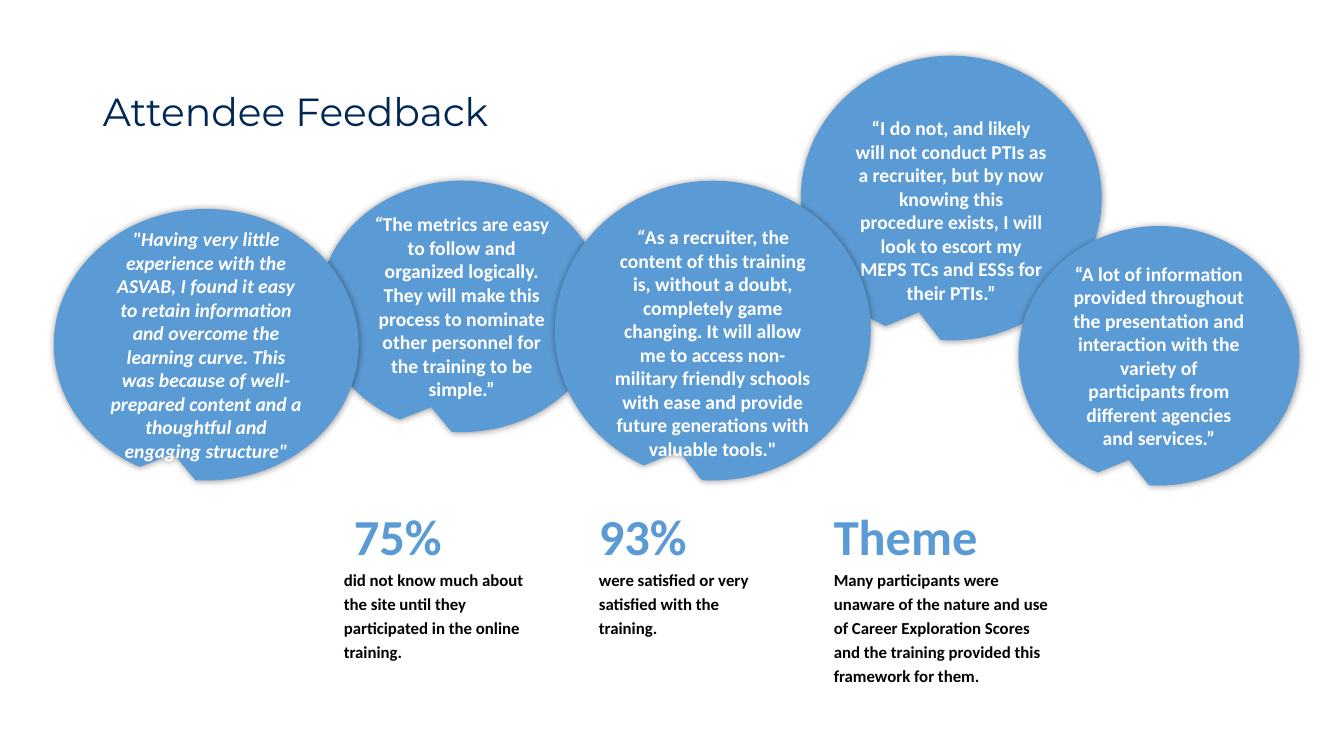
from lxml.etree import SubElement
from pptx import Presentation
from pptx.dml.color import RGBColor
from pptx.enum.shapes import MSO_SHAPE
from pptx.enum.text import MSO_ANCHOR, MSO_AUTO_SIZE, PP_ALIGN
from pptx.oxml.ns import qn
from pptx.util import Pt

PX = 9144  # 100 px to the inch
BLUE, NAVY, WHITE, BLACK = "5B9BD5", "002855", "FFFFFF", "000000"

TITLE = "Attendee Feedback"

# Bubbles from back to front: box, top inset, runs of (text, italic)
BUBBLES = [
    ((317, 180, 282, 248), 5, [
        ("“", True),
        ("The metrics are easy to follow and organized logically. They will make "
         "this process to nominate other personnel for the training to be "
         "simple.”", False)]),
    ((795, 56, 297, 281), 29, [
        ("“I do not, and likely will not conduct PTIs as a recruiter, but by now "
         "knowing this procedure exists, I will look to escort my MEPS TCs and "
         "ESSs for their PTIs.”", False)]),
    ((1011, 225, 277, 256), 5, [
        ("“A lot of information provided throughout the presentation and "
         "interaction with the variety of participants from different agencies "
         "and services.”", False)]),
    ((551, 180, 312, 296), 29, [
        ("“", True),
        ("As a recruiter, the content of this training is, without a doubt, "
         "completely game changing. It will allow me to access non-military "
         "friendly schools with ease and provide future generations with "
         "valuable tools.\"", False)]),
    ((54, 208, 301, 268), 5, [
        ("\"Having very little experience with the ASVAB, I found it easy to "
         "retain information and overcome the learning curve. This was because "
         "of well-prepared content and a thoughtful and engaging structure\"",
         True)]),
]

# Findings: heading, heading left, text, text left, text width, text height
FACTS = [
    ("75%", 351, "did not know much about the site until they participated in "
     "the online training.", 341, 189, 97),
    ("93%", 594, "were satisfied or very satisfied with the training.",
     594, 169, 73),
    ("Theme", 827, "Many participants were unaware of the nature and use of "
     "Career Exploration Scores and the training provided this framework for "
     "them.", 827, 213, 145),
]
HEAD_TOP, HEAD_H, FACT_TOP = 489, 73, 561


def emu(*sizes):
    return [size * PX for size in sizes]


def color(code):
    return RGBColor.from_string(code)


def write(frame, runs, size=14, font="Calibri", fill=WHITE, bold=True,
          align=PP_ALIGN.LEFT, space=1.0, anchor=MSO_ANCHOR.TOP,
          inset=(0, 0, 0, 0), fit=MSO_AUTO_SIZE.NONE):
    frame.word_wrap = True
    frame.auto_size = fit
    frame.vertical_anchor = anchor
    (frame.margin_left, frame.margin_top,
     frame.margin_right, frame.margin_bottom) = emu(*inset)
    para = frame.paragraphs[0]
    para.alignment = align
    para.line_spacing = space
    for text, slant in runs:
        run = para.add_run()
        run.text = text
        run.font.name = font
        run.font.size = Pt(size)
        run.font.bold = bold
        run.font.italic = slant
        run.font.color.rgb = color(fill)


def glow(shape):
    """Give the shape a soft, centred black shadow."""
    shape.shadow.inherit = False
    effects = shape._element.spPr.find(qn("a:effectLst"))
    shade = SubElement(effects, qn("a:outerShdw"), blurRad=str(Pt(5)),
                       dist="0", dir="0", algn="ctr", rotWithShape="0")
    tone = SubElement(shade, qn("a:srgbClr"), val=BLACK)
    SubElement(tone, qn("a:alpha"), val="40000")


def bubble(slide, box, top, runs):
    shape = slide.shapes.add_shape(MSO_SHAPE.OVAL_CALLOUT, *emu(*box))
    shape.adjustments[0] = -0.107
    shape.adjustments[1] = 0.4
    shape.fill.solid()
    shape.fill.fore_color.rgb = color(BLUE)
    shape.line.color.rgb = color(BLUE)
    shape.line.width = Pt(1)
    glow(shape)
    write(shape.text_frame, runs, align=PP_ALIGN.CENTER,
          anchor=MSO_ANCHOR.MIDDLE, inset=(10, top, 10, 5))


def label(slide, box, text, **style):
    area = slide.shapes.add_textbox(*emu(*box))
    write(area.text_frame, [(text, False)], space=1.2,
          fit=MSO_AUTO_SIZE.SHAPE_TO_FIT_TEXT, **style)


def main():
    deck = Presentation()
    deck.slide_width, deck.slide_height = emu(1333, 750)
    slide = deck.slides.add_slide(deck.slide_layouts[5])

    # Title
    title = slide.shapes.title
    title.left, title.top, title.width, title.height = emu(92, 40, 1150, 145)
    write(title.text_frame, [(TITLE, False)], size=28, font="Montserrat",
          fill=NAVY, bold=False, space=0.9, anchor=MSO_ANCHOR.MIDDLE,
          inset=(10, 5, 10, 5))

    # Findings below the bubbles
    for head, head_x, text, text_x, wide, high in FACTS:
        label(slide, (head_x, HEAD_TOP, wide, HEAD_H), head,
              size=36, fill=BLUE)
        label(slide, (text_x, FACT_TOP, wide, high), text,
              size=12, fill=BLACK)

    # Quotes
    for box, top, runs in BUBBLES:
        bubble(slide, box, top, runs)

    deck.save("out.pptx")


if __name__ == "__main__":
    main()
